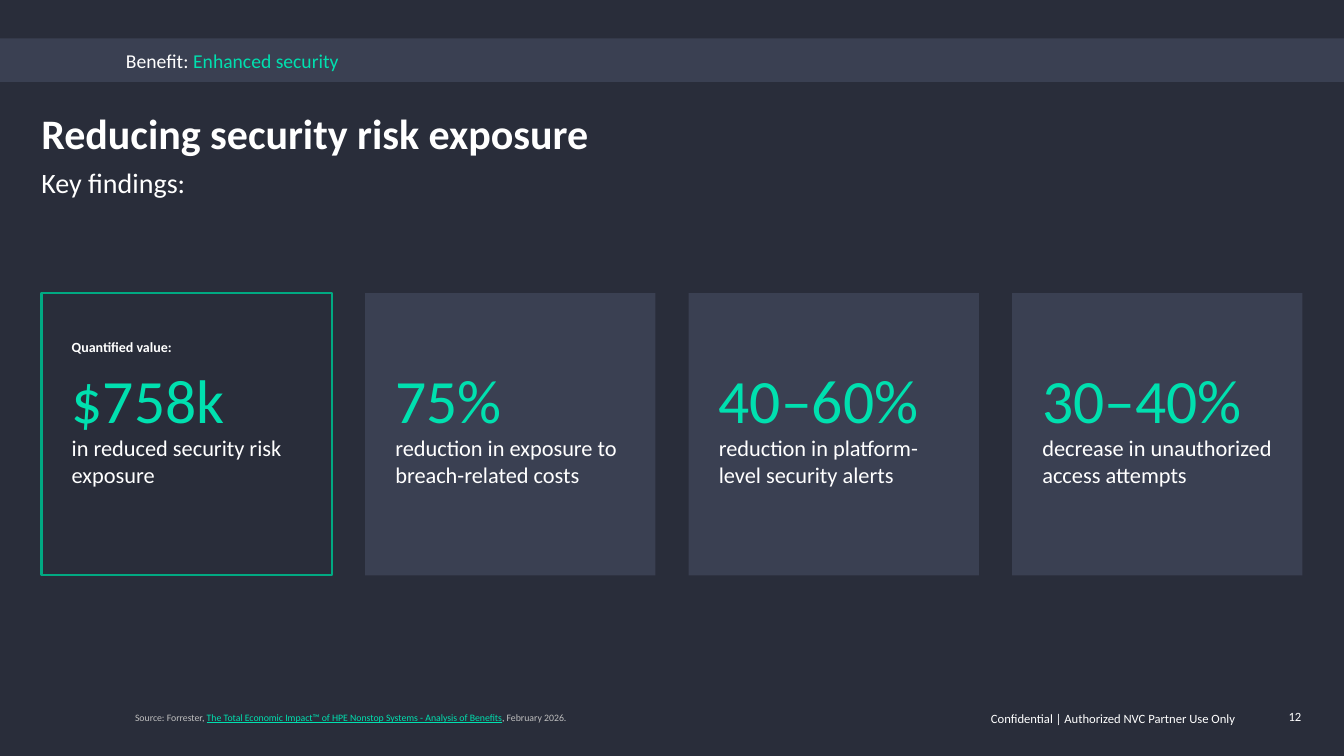
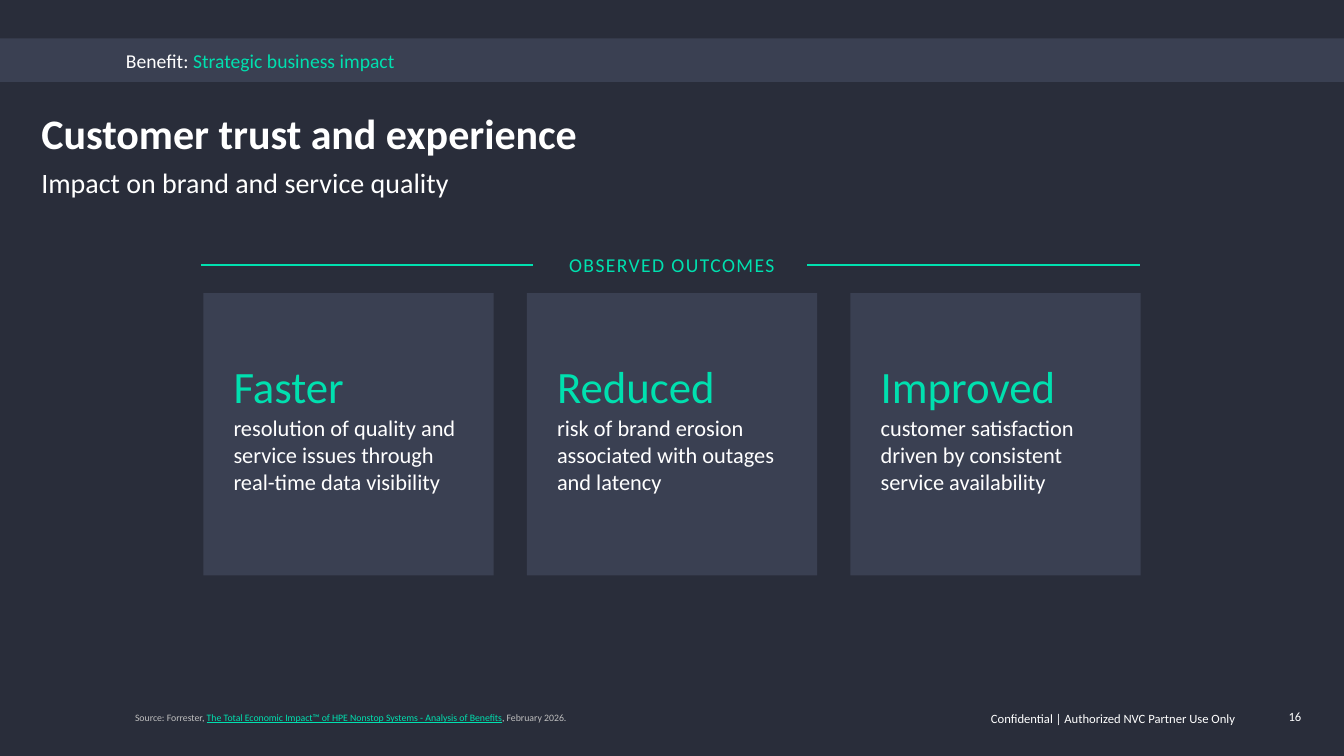
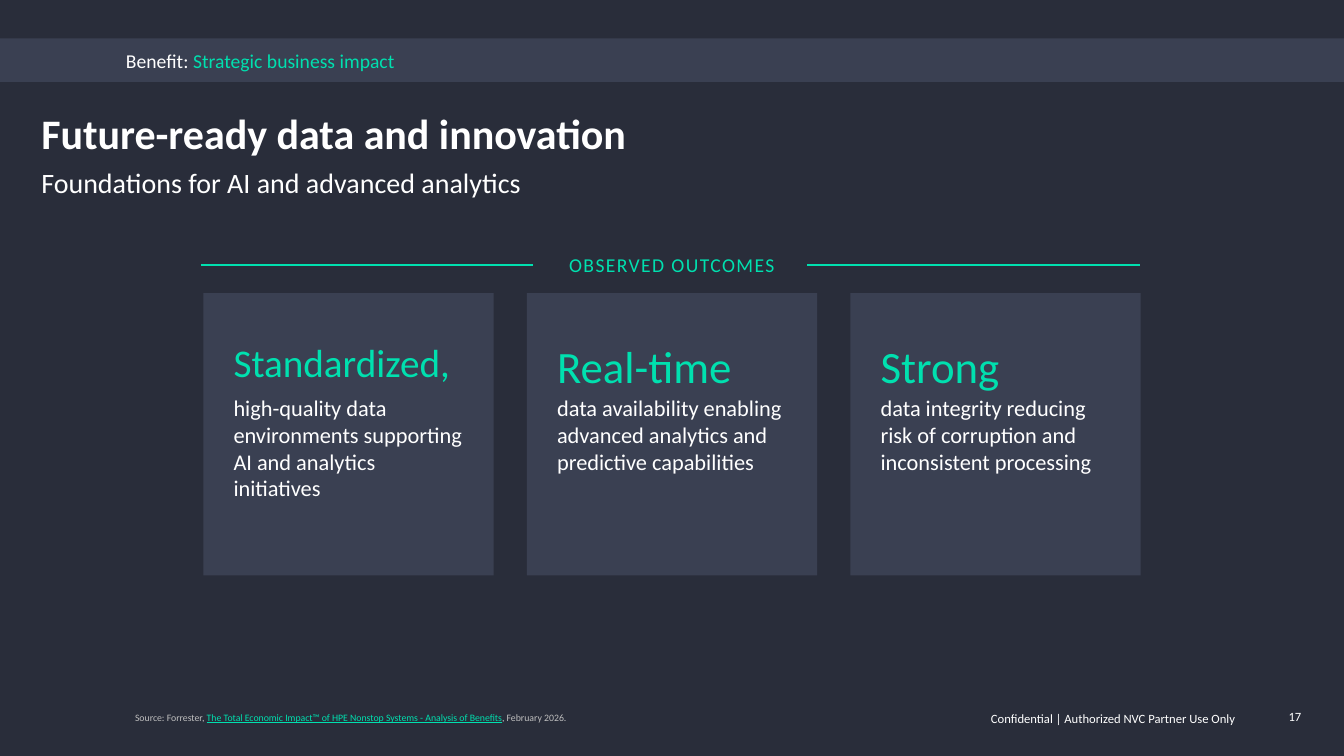
"""Build three benefit slides with a shared band, title style, stat cards and footer."""
import dataclasses

import pptx
import pptx.dml.color
import pptx.enum.shapes
import pptx.enum.text
import pptx.oxml.ns
import pptx.util
from lxml import etree

Pt = pptx.util.Pt
ANCHOR = pptx.enum.text.MSO_ANCHOR
ALIGN = pptx.enum.text.PP_ALIGN


@dataclasses.dataclass(frozen=True)
class Theme:
    font: str = "Calibri"
    background: str = "292D3A"
    panel: str = "3A4052"
    text: str = "FFFFFF"
    accent: str = "00E0AF"
    outline: str = "01A982"
    muted: str = "BFBFBF"
    title: int = 30
    subtitle: int = 20
    caption: int = 16
    label: int = 14
    note: int = 10
    footer: int = 9
    source: int = 7


THEME = Theme()

SLIDES = [
    {
        "number": "12",
        "benefit": "Enhanced security",
        "title": "Reducing security risk exposure",
        "subtitle": "Key findings:",
        "headline_size": 44,
        "headline_top": 49,
        "caption_top": 100.8,
        "cards": [
            {"headline": "$758k", "caption": "in reduced security risk exposure",
             "note": "Quantified value:"},
            {"headline": "75%", "caption": "reduction in exposure to breach-related costs"},
            {"headline": "40–60%", "caption": "reduction in platform-level security alerts"},
            {"headline": "30–40%", "caption": "decrease in unauthorized access attempts"},
        ],
    },
    {
        "number": "16",
        "benefit": "Strategic business impact",
        "title": "Customer trust and experience",
        "subtitle": "Impact on brand and service quality",
        "heading": "OBSERVED OUTCOMES",
        "headline_size": 32,
        "headline_top": 46.8,
        "caption_top": 86.4,
        "cards": [
            {"headline": "Faster",
             "caption": "resolution of quality and service issues through real-time data visibility"},
            {"headline": "Reduced",
             "caption": "risk of brand erosion associated with outages and latency"},
            {"headline": "Improved",
             "caption": "customer satisfaction driven by consistent service availability"},
        ],
    },
    {
        "number": "17",
        "benefit": "Strategic business impact",
        "title": "Future-ready data and innovation",
        "subtitle": "Foundations for AI and advanced analytics",
        "heading": "OBSERVED OUTCOMES",
        "headline_size": 32,
        "headline_top": 32.4,
        "caption_top": 72,
        "cards": [
            {"headline": "Standardized,", "size": 28,
             "caption": "high-quality data environments supporting AI and analytics initiatives"},
            {"headline": "Real-time",
             "caption": "data availability enabling advanced analytics and predictive capabilities"},
            {"headline": "Strong",
             "caption": "data integrity reducing risk of corruption and inconsistent processing"},
        ],
    },
]

SOURCE = [
    ("Source: Forrester, ", THEME.muted, False),
    ("The Total Economic Impact™ of HPE Nonstop Systems - Analysis of Benefits", THEME.accent, True),
    (", February 2026.", THEME.muted, False),
]
CONFIDENTIAL = "Confidential | Authorized NVC Partner Use Only"

PAGE_WIDTH, PAGE_HEIGHT = 960, 540
MARGIN, CONTENT_WIDTH = 29.5, 900
CARD_TOP, CARD_WIDTH, CARD_HEIGHT, CARD_GAP = 209.4, 207.4, 201.6, 23.7
CARD_INSET = 21.6
RULE_TOP, RULE_WIDTH = 189.4, 237.6
RULE_LEFTS = (143.3, 576.7)
BODY_INSETS = (0, 0, 7.2, 3.6)


def rgb(color):
    return pptx.dml.color.RGBColor.from_string(color)


def set_font(font, size, color, bold=False):
    font.name, font.size, font.bold = THEME.font, Pt(size), bold
    font.color.rgb = rgb(color)


def set_frame(frame, insets, anchor=ANCHOR.TOP):
    frame.word_wrap = True
    frame.auto_size = pptx.enum.text.MSO_AUTO_SIZE.NONE
    frame.vertical_anchor = anchor
    frame.margin_left, frame.margin_top, frame.margin_right, frame.margin_bottom = map(Pt, insets)


def write(frame, text, size, color, align=ALIGN.LEFT, bold=False):
    para = frame.paragraphs[0]
    para.text = text
    para.alignment = align
    set_font(para.font, size, color, bold)
    return para


def add_text(page, place, text, size, color=THEME.text, insets=(0, 0, 0, 0),
             anchor=ANCHOR.TOP, align=ALIGN.LEFT, bold=False):
    box = page.shapes.add_textbox(*map(Pt, place))
    set_frame(box.text_frame, insets, anchor)
    return write(box.text_frame, text, size, color, align, bold)


def add_spans(para, spans, size):
    for text, color, underlined in spans:
        span = para.add_run()
        span.text = text
        set_font(span.font, size, color)
        span.font.underline = underlined


def add_panel(page, place, outlined=False):
    panel = page.shapes.add_shape(pptx.enum.shapes.MSO_SHAPE.RECTANGLE, *map(Pt, place))
    panel.shadow.inherit = False
    if outlined:
        panel.fill.background()
        panel.line.color.rgb = rgb(THEME.outline)
        panel.line.width = Pt(1.5)
    else:
        panel.fill.solid()
        panel.fill.fore_color.rgb = rgb(THEME.panel)
        panel.line.fill.background()
    return panel


def add_header(page, content):
    add_panel(page, (0, 27.5, PAGE_WIDTH, 31))
    title = page.shapes.title
    title.left, title.top, title.width, title.height = map(Pt, (MARGIN, 80.6, CONTENT_WIDTH, 32.4))
    set_frame(title.text_frame, (0, 0, 7.2, 0))
    para = write(title.text_frame, content["title"], THEME.title, THEME.text, bold=True)
    para.line_spacing = 0.9
    add_text(page, (MARGIN, 117.4, CONTENT_WIDTH, 28.8), content["subtitle"], THEME.subtitle,
             insets=BODY_INSETS, anchor=ANCHOR.MIDDLE)
    para = add_text(page, (90, 31, 840, 28.8), "", THEME.label,
                    insets=BODY_INSETS, anchor=ANCHOR.MIDDLE)
    spans = [("Benefit: ", THEME.text, False), (content["benefit"], THEME.accent, False)]
    add_spans(para, spans, THEME.label)


def add_heading(page, text):
    para = add_text(page, (389.5, 176.4, 188, 28.8), text, THEME.label, THEME.accent,
                    BODY_INSETS, ANCHOR.MIDDLE, ALIGN.CENTER)
    para.runs[0].font._element.set("spc", "100")
    for left in RULE_LEFTS:
        rule = page.shapes.add_connector(pptx.enum.shapes.MSO_CONNECTOR.STRAIGHT,
                                         Pt(left), Pt(RULE_TOP), Pt(left + RULE_WIDTH), Pt(RULE_TOP))
        rule.line.color.rgb = rgb(THEME.accent)
        rule.line.width = Pt(1)
        etree.SubElement(rule._element.spPr, pptx.oxml.ns.qn("a:effectLst"))


def add_cards(page, content):
    cards = content["cards"]
    pitch = CARD_WIDTH + CARD_GAP
    start = (PAGE_WIDTH - len(cards) * pitch + CARD_GAP) / 2
    for index, card in enumerate(cards):
        left = round(start + index * pitch, 2)
        panel = add_panel(page, (left, CARD_TOP, CARD_WIDTH, CARD_HEIGHT), "note" in card)
        set_frame(panel.text_frame, (CARD_INSET, content["caption_top"], CARD_INSET, 0))
        write(panel.text_frame, card["caption"], THEME.caption, THEME.text)
        size = card.get("size", content["headline_size"])
        add_text(page, (left, CARD_TOP + content["headline_top"], CARD_WIDTH, size * 1.2),
                 card["headline"], size, THEME.accent, (CARD_INSET, 0, 0, 0))
        if "note" in card:
            add_text(page, (left, CARD_TOP + 32.5, CARD_WIDTH, 12), card["note"], THEME.note,
                     insets=(CARD_INSET, 0, 0, 0), bold=True)


def add_footer(page, number):
    para = add_text(page, (96.5, 508.3, 693, 8.6), "", THEME.source, anchor=ANCHOR.BOTTOM)
    add_spans(para, SOURCE, THEME.source)
    add_text(page, (399.6, 504, 489.6, 15), CONFIDENTIAL, THEME.footer,
             insets=(7.2, 3.6, 7.2, 3.6), align=ALIGN.RIGHT)
    add_text(page, (903, 504, 26.6, 15), number, THEME.footer,
             insets=(0, 3.6, 0, 3.6), anchor=ANCHOR.MIDDLE, align=ALIGN.RIGHT)


def main():
    deck = pptx.Presentation()
    deck.slide_width, deck.slide_height = Pt(PAGE_WIDTH), Pt(PAGE_HEIGHT)
    backdrop = deck.slide_master.background.fill
    backdrop.solid()
    backdrop.fore_color.rgb = rgb(THEME.background)
    for content in SLIDES:
        page = deck.slides.add_slide(deck.slide_layouts[5])
        add_header(page, content)
        if "heading" in content:
            add_heading(page, content["heading"])
        add_cards(page, content)
        add_footer(page, content["number"])
    deck.save("out.pptx")


if __name__ == "__main__":
    main()
